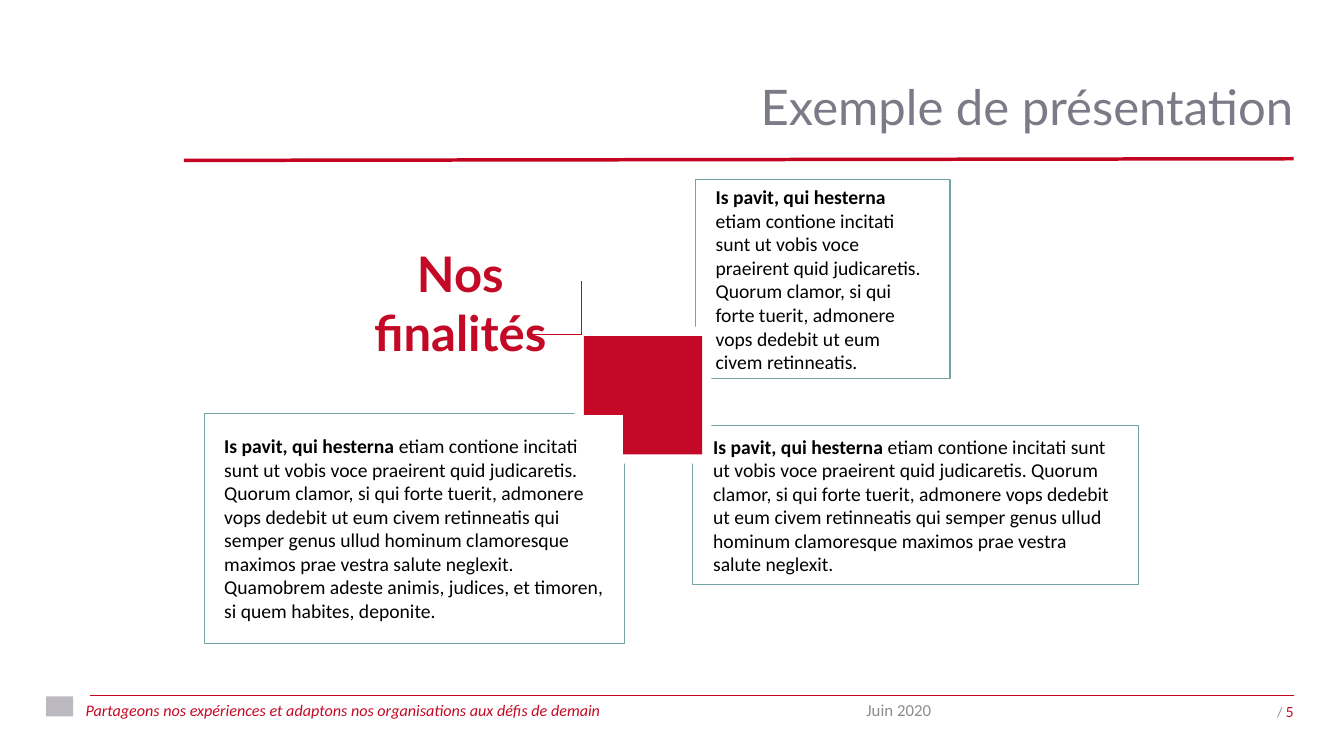
from dataclasses import dataclass
from typing import NamedTuple

from lxml import etree
from pptx import Presentation
from pptx import util as u
from pptx.dml.color import RGBColor
from pptx.enum import shapes, text
from pptx.oxml import ns


@dataclass(frozen=True)
class Theme:
    red: str = "C30925"
    rule: str = "C30421"
    teal: str = "72A5A3"
    slate: str = "7B7B87"
    gray: str = "8C8C8C"
    pale: str = "BCB9C0"
    white: str = "FFFFFF"
    black: str = "000000"
    head: str = "Lato"
    body: str = "Calibri"
    big: float = 35
    main: float = 14
    date: float = 12
    foot: float = 11.5
    page: float = 10


class Area(NamedTuple):
    col: float
    row: float
    wide: float
    high: float


class Card(NamedTuple):
    area: Area
    tail: str


class Rule(NamedTuple):
    start: tuple[float, float]
    end: tuple[float, float]
    width: float


class Run(NamedTuple):
    words: str
    size: float
    color: str
    font: str = "Calibri"
    bold: bool = False
    slant: bool = False


T = Theme()
COLS, ROWS = 160, 90
WIDE, HIGH = u.Inches(13.33), u.Inches(7.5)
PAD = 2.4
LEAD = "Is pavit, qui hesterna "
BASE = (
    "etiam contione incitati sunt ut vobis voce praeirent quid judicaretis. "
    "Quorum clamor, si qui forte tuerit, admonere vops dedebit ut eum civem retinneatis"
)
MORE = BASE + " qui semper genus ullud hominum clamoresque maximos prae vestra salute neglexit."
LAST = " Quamobrem adeste animis, judices, et timoren, si quem habites, deponite."

CARDS = [
    Card(Area(24.3, 49.2, 50.1, 27.4), MORE + LAST),
    Card(Area(82.5, 50.7, 53, 18.9), MORE),
    Card(Area(82.8, 21.4, 30.3, 23.7), BASE + "."),
]
FRAME = [
    Rule((10.7, 82.8), (154, 82.8), 0.75),
    Rule((21.9, 19.1), (154, 18.9), 2.5),
]
CORNER = [
    Rule((69.25, 33.5), (69.25, 39.85), 1),
    Rule((69.25, 39.85), (62.9, 39.85), 1),
]


def across(col: float) -> int:
    return round(WIDE * col / COLS)


def down(row: float) -> int:
    return round(HIGH * row / ROWS)


def place(area: Area) -> tuple[int, int, int, int]:
    return across(area.col), down(area.row), across(area.wide), down(area.high)


def tint(code: str) -> RGBColor:
    return RGBColor.from_string(code)


def paint(shape, fill: str, line: str | None = None) -> None:
    shape.shadow.inherit = False
    shape.fill.solid()
    shape.fill.fore_color.rgb = tint(fill)
    if line:
        shape.line.color.rgb = tint(line)
        shape.line.width = u.Pt(0.75)
    else:
        shape.line.fill.background()


def write(shape, *runs: Run, align=text.PP_ALIGN.LEFT, anchor=text.MSO_ANCHOR.MIDDLE,
          pad: float = 0, wrap: bool = True, pitch: float | None = None) -> None:
    frame = shape.text_frame
    frame.word_wrap = wrap
    frame.vertical_anchor = anchor
    frame.margin_left = frame.margin_right = across(pad)
    frame.margin_top = frame.margin_bottom = down(pad)
    para = frame.paragraphs[0]
    para.alignment = align
    if pitch:
        para.line_spacing = u.Pt(pitch)
    for item in runs:
        run = para.add_run()
        run.text = item.words
        font = run.font
        font.size, font.name = u.Pt(item.size), item.font
        font.bold, font.italic = item.bold, item.slant
        font.color.rgb = tint(item.color)


def block(slide, area: Area, fill: str, line: str | None = None):
    shape = slide.shapes.add_shape(shapes.MSO_SHAPE.RECTANGLE, *place(area))
    paint(shape, fill, line)
    return shape


def label(slide, area: Area, *runs: Run, **look) -> None:
    write(slide.shapes.add_textbox(*place(area)), *runs, **look)


def draw(slide, rule: Rule) -> None:
    (left, top), (right, base) = rule.start, rule.end
    line = slide.shapes.add_connector(
        shapes.MSO_CONNECTOR.STRAIGHT, across(left), down(top), across(right), down(base))
    line.line.color.rgb = tint(T.rule)
    line.line.width = u.Pt(rule.width)
    etree.SubElement(line._element.spPr, ns.qn("a:effectLst"))


def notch(slide, left: float, top: float, size: float, fill: str) -> None:
    third = size / 3
    steps = [(0, 0), (0, 2), (1, 2), (1, 3), (3, 3), (3, 0)]
    dots = [(across(left + x * third), down(top + y * third)) for x, y in steps]
    pen = slide.shapes.build_freeform(*dots[0])
    pen.add_line_segments(dots[1:], close=True)
    paint(pen.convert_to_shape(), fill)


def main() -> None:
    deck = Presentation()
    deck.slide_width, deck.slide_height = WIDE, HIGH
    slide = deck.slides.add_slide(deck.slide_layouts[6])
    right, center = text.PP_ALIGN.RIGHT, text.PP_ALIGN.CENTER

    for rule in FRAME:
        draw(slide, rule)
    label(slide, Area(10.2, 83.4, 79.2, 2.5),
          Run("Partageons nos expériences et adaptons nos organisations aux défis de demain",
              T.foot, T.red, slant=True), anchor=text.MSO_ANCHOR.TOP)
    block(slide, Area(5.5, 82.9, 3.2, 2.4), T.pale)
    label(slide, Area(63.6, 4.4, 90.4, 11.7),
          Run("Exemple de présentation", T.big, T.slate, T.head),
          align=right, anchor=text.MSO_ANCHOR.BOTTOM, pitch=T.big)

    for card in CARDS:
        write(block(slide, card.area, T.white, T.teal),
              Run(LEAD, T.main, T.black, bold=True), Run(card.tail, T.main, T.black), pad=PAD)
    notch(slide, 68.4, 38.9, 16.3, T.white)
    notch(slide, 69.5, 40, 14.1, T.red)

    label(slide, Area(40.3, 31.8, 29, 8.3),
          Run("Nos finalités", T.big, T.red, T.head, bold=True), align=center, wrap=False)
    for rule in CORNER:
        draw(slide, rule)
    label(slide, Area(80, 83, 54, 3), Run("Juin 2020", T.date, T.gray), align=center)
    label(slide, Area(149.1, 83.5, 4.9, 2.4),
          Run("/ ", T.page, T.gray), Run("5", T.page, T.red, T.head), align=right)
    deck.save("out.pptx")


if __name__ == "__main__":
    main()
